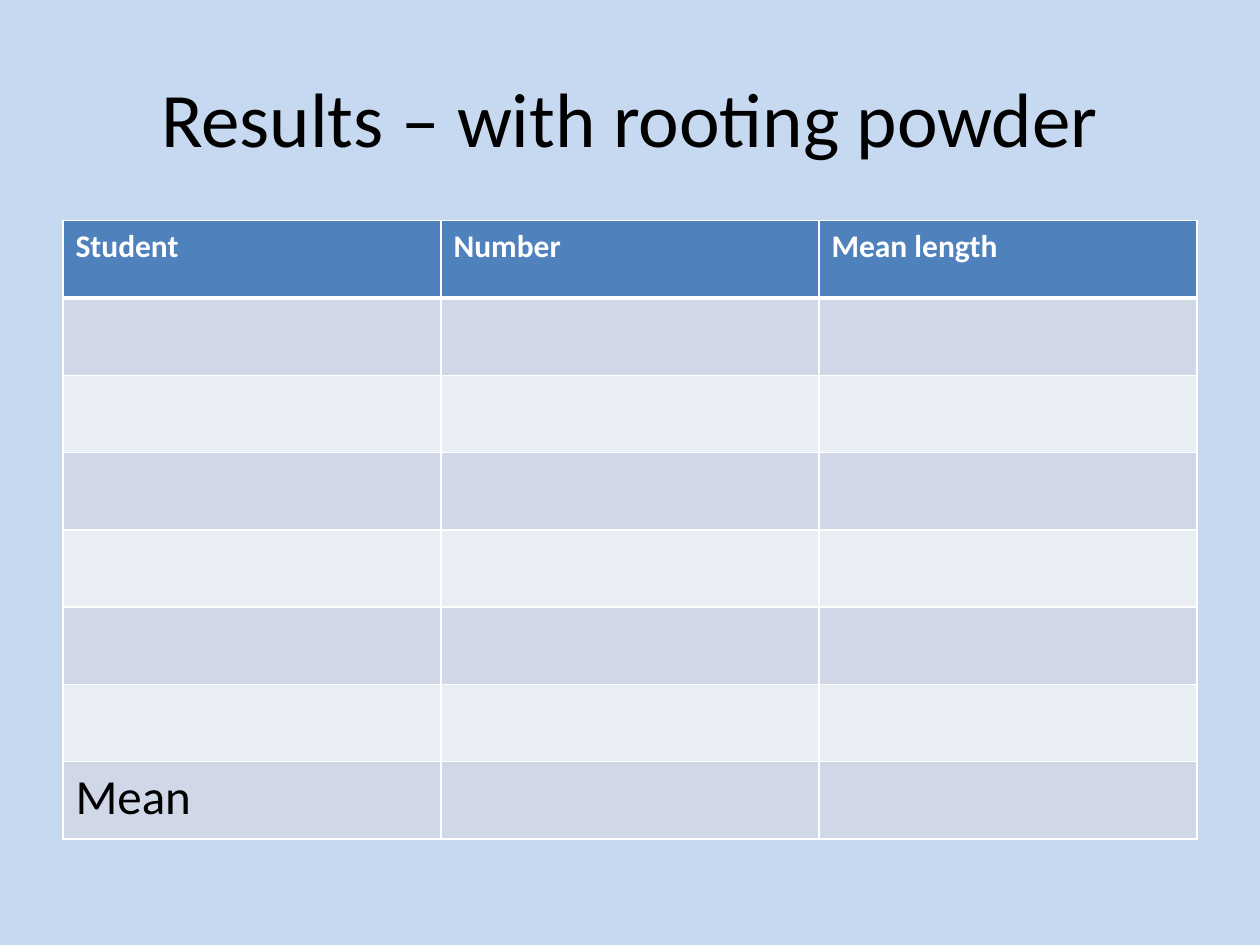
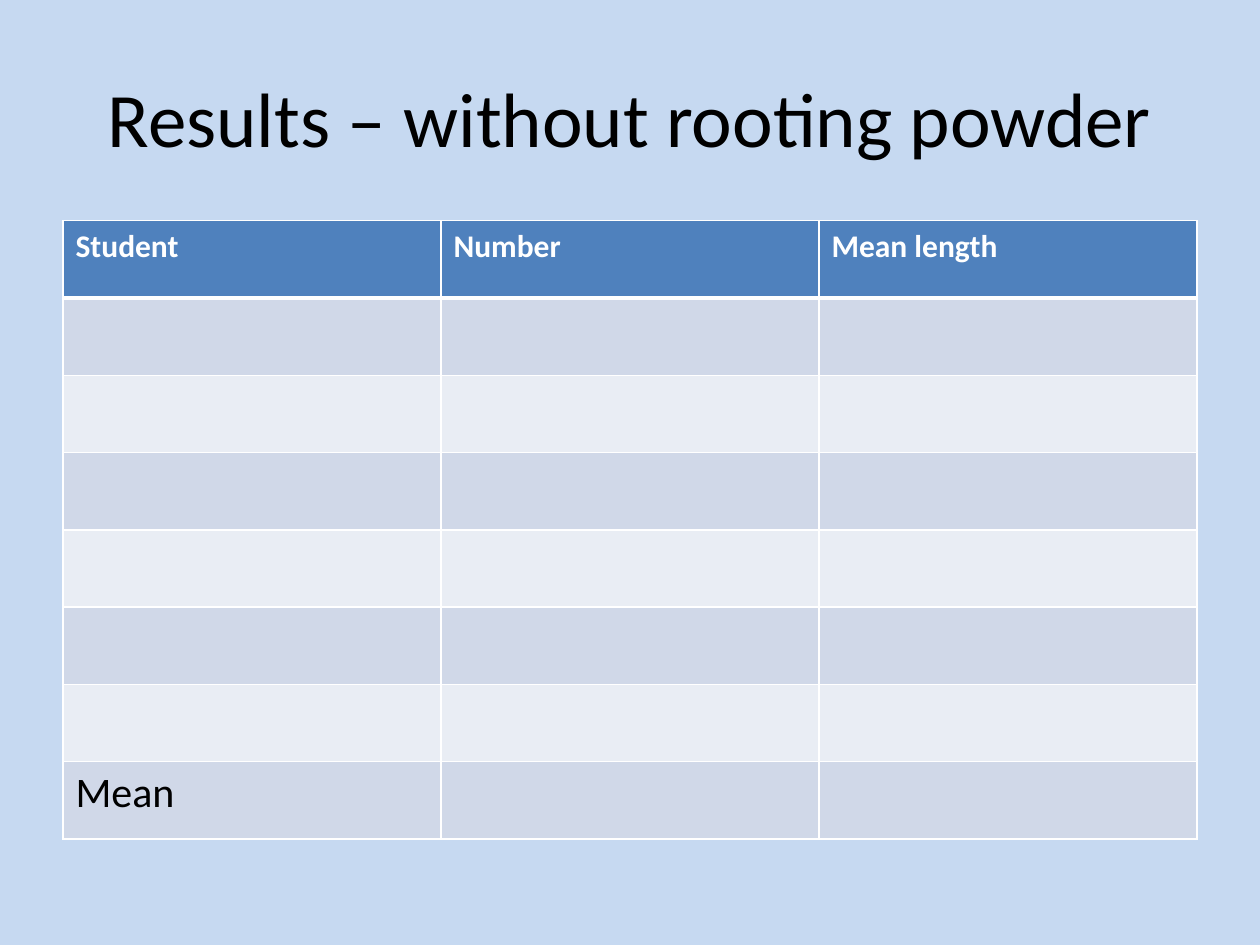
from lxml import etree
from pptx import Presentation
from pptx.dml.color import RGBColor
from pptx.enum.text import MSO_ANCHOR, PP_ALIGN
from pptx.oxml.ns import qn
from pptx.util import Cm, Pt

CENTER, MIDDLE = PP_ALIGN.CENTER, MSO_ANCHOR.MIDDLE

SKY = RGBColor(0xC6, 0xD9, 0xF1)
BLUE = RGBColor(0x4F, 0x81, 0xBD)
DARK_BAND = RGBColor(0xD0, 0xD8, 0xE8)
LIGHT_BAND = RGBColor(0xE9, 0xED, 0xF4)
WHITE = RGBColor(0xFF, 0xFF, 0xFF)
BLACK = RGBColor(0x00, 0x00, 0x00)

FONT = "Calibri"
TITLE_ONLY = 5
LEFT, WIDTH = Cm(1.27), Cm(22.86)
TITLE_BOX = {"left": LEFT, "top": Cm(0.76), "width": WIDTH, "height": Cm(3.18)}
TABLE_TOP, TABLE_HEIGHT = Cm(4.45), Cm(12.47)

HEADINGS = ["Student", "Number", "Mean length"]
STUDENT_ROWS = 6
THIN, THICK = Pt(1), Pt(3)

# Title and size of the "Mean" label
RESULTS = [
    ("Results – with rooting powder", 28),
    ("Results – without rooting powder", 24),
]


def set_values(target, values):
    for name, value in values.items():
        setattr(target, name, value)


def write_text(frame, text, size, color, bold=False):
    para = frame.paragraphs[0]
    span = para.add_run()
    span.text = text
    set_values(span.font, {"name": FONT, "size": Pt(size), "bold": bold})
    span.font.color.rgb = color
    return para


def add_title(page, text):
    title = page.shapes.title
    set_values(title, TITLE_BOX)
    set_values(title.text_frame, {"word_wrap": True, "vertical_anchor": MIDDLE})
    write_text(title.text_frame, text, 44, BLACK).alignment = CENTER


def set_borders(cell, top, bottom):
    """Draw white lines on all four sides; top and bottom are line widths."""
    properties = cell._tc.get_or_add_tcPr()
    widths = {"a:lnL": THIN, "a:lnR": THIN, "a:lnT": top, "a:lnB": bottom}
    for tag, width in widths.items():
        line = etree.SubElement(properties, qn(tag), w=str(width))
        fill = etree.SubElement(line, qn("a:solidFill"))
        etree.SubElement(fill, qn("a:srgbClr"), val=str(WHITE))


def row_color(row):
    if row == 0:
        return BLUE
    return DARK_BAND if row % 2 else LIGHT_BAND


def add_results_table(page, mean_size):
    row_count = STUDENT_ROWS + 2
    frame = page.shapes.add_table(
        row_count, len(HEADINGS), LEFT, TABLE_TOP, WIDTH, TABLE_HEIGHT
    )
    table = frame.table
    for row in range(row_count):
        for column in range(len(HEADINGS)):
            cell = table.cell(row, column)
            set_borders(
                cell,
                top=THICK if row == 1 else THIN,
                bottom=THICK if row == 0 else THIN,
            )
            cell.fill.solid()
            cell.fill.fore_color.rgb = row_color(row)
    for column, heading in enumerate(HEADINGS):
        write_text(table.cell(0, column).text_frame, heading, 18, WHITE, bold=True)
    write_text(table.cell(row_count - 1, 0).text_frame, "Mean", mean_size, BLACK)


def main():
    deck = Presentation()
    set_values(deck, {"slide_width": Cm(25.4), "slide_height": Cm(19.05)})
    background = deck.slide_master.background.fill
    background.solid()
    background.fore_color.rgb = SKY
    for title, mean_size in RESULTS:
        page = deck.slides.add_slide(deck.slide_layouts[TITLE_ONLY])
        add_title(page, title)
        add_results_table(page, mean_size)
    deck.save("out.pptx")


if __name__ == "__main__":
    main()
